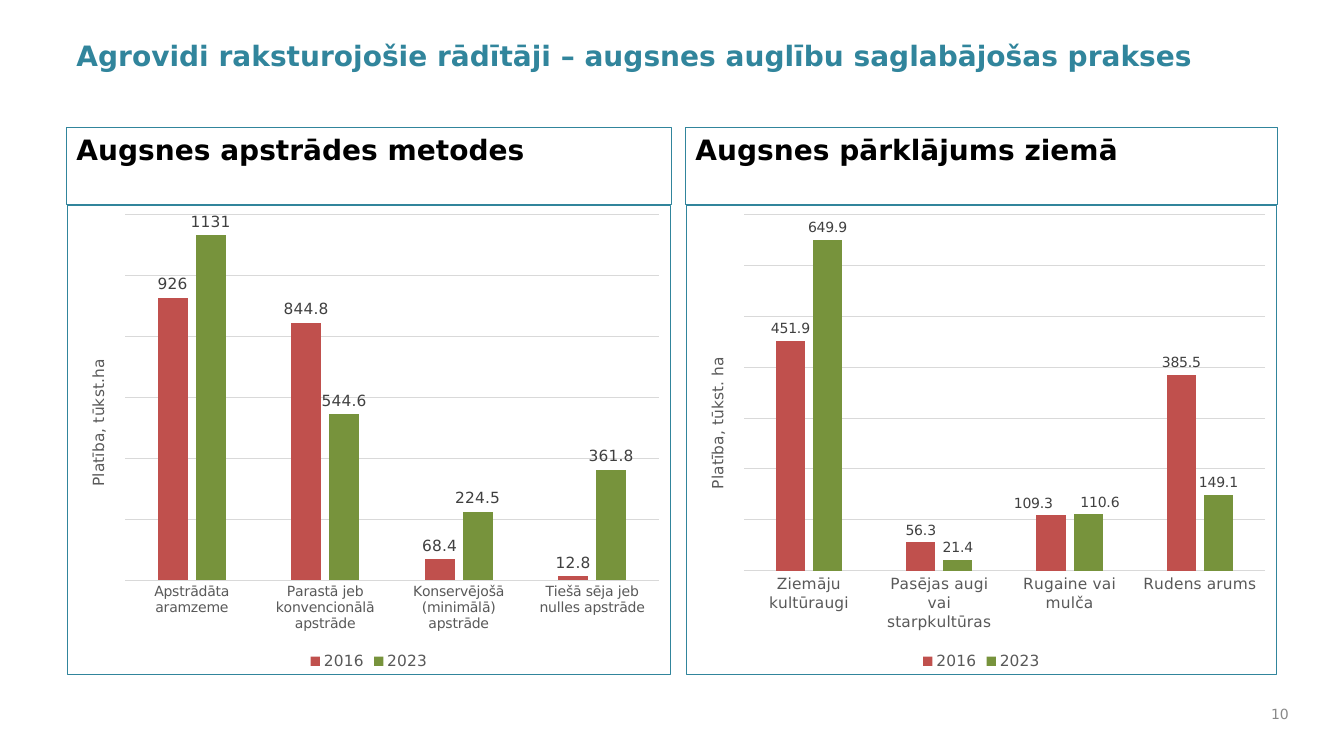
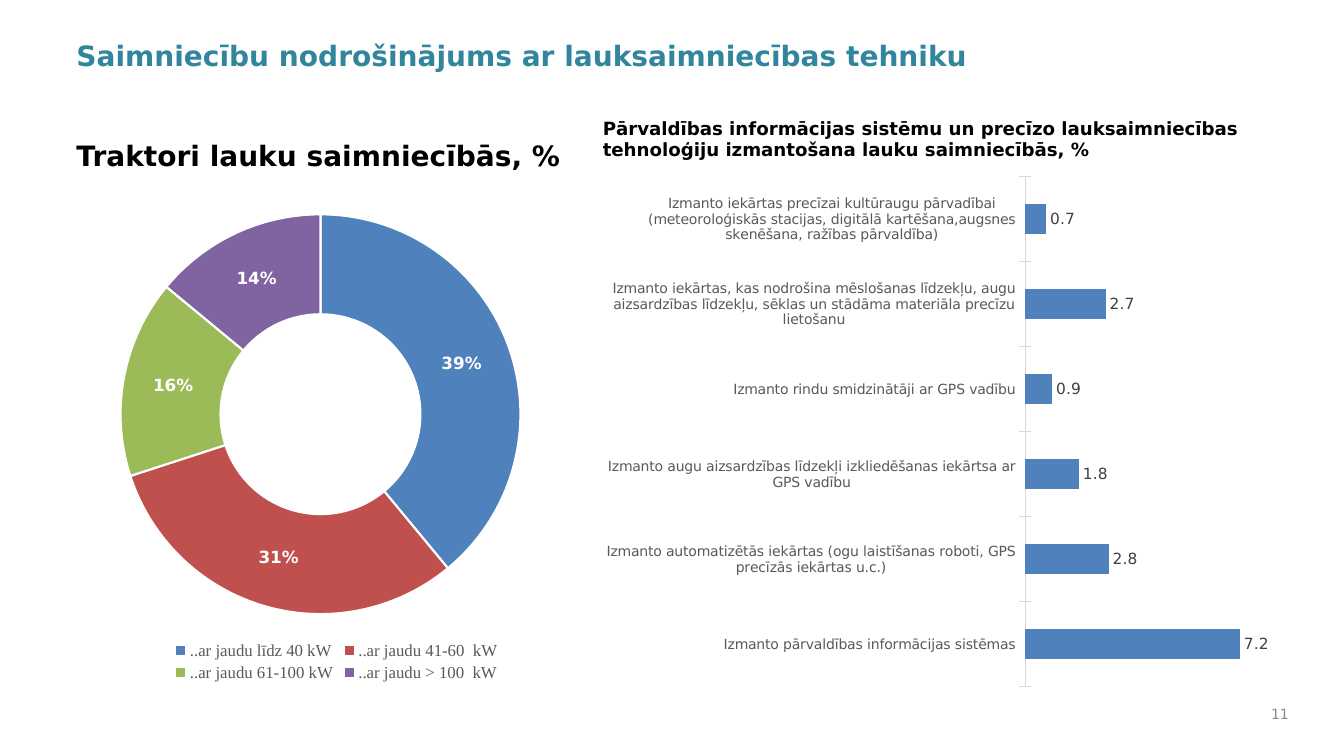
"""Build two slides of farm indicators with native charts."""
from lxml.etree import SubElement
from pptx import Presentation
from pptx.chart.data import CategoryChartData
from pptx.dml.color import RGBColor
from pptx.enum.chart import XL_CHART_TYPE, XL_LABEL_POSITION, XL_LEGEND_POSITION, XL_TICK_MARK
from pptx.enum.text import MSO_ANCHOR, PP_ALIGN
from pptx.oxml import parse_xml
from pptx.oxml.ns import nsdecls, qn
from pptx.util import Inches, Pt

WIDTH, HEIGHT = 13.33, 7.5
MARGIN = 0.66
CONTENT = WIDTH - 2 * MARGIN
SANS, SERIF = "DejaVu Sans", "Times New Roman"
TEAL, BLACK, WHITE = "31859C", "000000", "FFFFFF"
GREY, DARK, PALE, FOOTER = "595959", "404040", "D9D9D9", "898989"
BLUE, RED, LIME, PURPLE, GREEN = "4F81BD", "C0504D", "9BBB59", "8064A2", "77933C"

PANEL_TOP, HEADING_HEIGHT, PANEL_CHART_HEIGHT, PANEL_GAP = 1.27, 0.76, 4.67, 0.14
PRACTICES = {
    "title": "Agrovidi raksturojošie rādītāji – augsnes auglību saglabājošas prakses",
    "number": "10",
    "panels": [
        {
            "heading": "Augsnes apstrādes metodes",
            "width": 6,
            "unit": "Platība, tūkst.ha",
            "categories": ["Apstrādāta aramzeme", "Parastā jeb konvencionālā apstrāde",
                           "Konservējošā (minimālā) apstrāde", "Tiešā sēja jeb nulles apstrāde"],
            "series": [("2016", [926, 844.8, 68.4, 12.8], RED),
                       ("2023", [1131, 544.6, 224.5, 361.8], GREEN)],
            "scale": (1200, 200), "category_size": 10, "label_size": 11, "shifts": [],
        },
        {
            "heading": "Augsnes pārklājums ziemā",
            "width": 5.87,
            "unit": "Platība, tūkst. ha",
            "categories": ["Ziemāju kultūraugi", "Pasējas augi vai starpkultūras",
                           "Rugaine vai mulča", "Rudens arums"],
            "series": [("2016", [451.9, 56.3, 109.3, 385.5], RED),
                       ("2023", [649.9, 21.4, 110.6, 149.1], GREEN)],
            "scale": (700, 100), "category_size": 11, "label_size": 10,
            "shifts": [(0, 2, -0.03), (1, 2, 0.02)],
        },
    ],
}
MACHINERY = {
    "title": "Saimniecību nodrošinājums ar lauksaimniecības tehniku",
    "number": "11",
    "tractor_heading": "Traktori lauku saimniecībās, %",
    "tractors": [("..ar jaudu līdz 40 kW", 39, BLUE), ("..ar jaudu 41-60  kW", 31, RED),
                 ("..ar jaudu 61-100 kW", 16, LIME), ("..ar jaudu > 100  kW", 14, PURPLE)],
    "technology_heading": "Pārvaldības informācijas sistēmu un precīzo lauksaimniecības "
                          "tehnoloģiju izmantošana lauku saimniecībās, %",
    "technologies": [
        ("Izmanto pārvaldības informācijas sistēmas", 7.2),
        ("Izmanto automatizētās iekārtas (ogu laistīšanas roboti, GPS precīzās iekārtas u.c.)", 2.8),
        ("Izmanto augu aizsardzības līdzekļi izkliedēšanas iekārtsa ar GPS vadību", 1.8),
        ("Izmanto rindu smidzinātāji ar GPS vadību", 0.9),
        ("Izmanto iekārtas, kas nodrošina mēslošanas līdzekļu, augu aizsardzības līdzekļu, "
         "sēklas un stādāma materiāla precīzu lietošanu", 2.7),
        ("Izmanto iekārtas precīzai kultūraugu pārvadībai (meteoroloģiskās stacijas, "
         "digitālā kartēšana,augsnes skenēšana, ražības pārvaldība)", 0.7),
    ],
}


def color(value):
    return RGBColor.from_string(value)


def style_font(font, size, tint, face=SANS, bold=False):
    font.size, font.name, font.bold = Pt(size), face, bold
    font.color.rgb = color(tint)


def style_line(line, tint, width=0.75):
    line.color.rgb = color(tint)
    line.width = Pt(width)


def add_text(page, place, text, size=20, tint=BLACK, bold=True,
             align=PP_ALIGN.LEFT, anchor=MSO_ANCHOR.TOP):
    box = page.shapes.add_textbox(*map(Inches, place))
    frame = box.text_frame
    frame.word_wrap = True
    frame.vertical_anchor = anchor
    para = frame.paragraphs[0]
    para.alignment = align
    span = para.add_run()
    span.text = text
    style_font(span.font, size, tint, bold=bold)
    return box


def add_page(deck, content):
    page = deck.slides.add_slide(deck.slide_layouts[6])
    add_text(page, (MARGIN, 0.33, CONTENT, HEADING_HEIGHT), content["title"], tint=TEAL)
    add_text(page, (12.44, 6.92, 0.44, 0.33), content["number"], 10, FOOTER, False,
             PP_ALIGN.RIGHT, MSO_ANCHOR.MIDDLE)
    return page


def add_chart(page, kind, place, categories, series, face=SANS, border=None):
    data = CategoryChartData()
    data.categories = categories
    for name, values in series:
        data.add_series(name, values)
    chart = page.shapes.add_chart(kind, *map(Inches, place), data).chart
    chart.has_title = False
    chart.has_legend = False
    style_font(chart.font, 11, BLACK, face)
    outline = f'<a:solidFill><a:srgbClr val="{border}"/></a:solidFill>' if border else "<a:noFill/>"
    chart.element.find(qn("c:chart")).addnext(parse_xml(
        f'<c:spPr {nsdecls("c", "a")}><a:noFill/><a:ln w="{Pt(0.75)}">{outline}</a:ln></c:spPr>'))
    return chart


def add_legend(chart, size, face=SANS):
    chart.has_legend = True
    chart.legend.position = XL_LEGEND_POSITION.BOTTOM
    chart.legend.include_in_layout = False
    style_font(chart.legend.font, size, GREY, face)


def style_bars(chart, tints, scale, gap, overlap, category_size, label_size, tick):
    plot = chart.plots[0]
    plot.vary_by_categories = False
    plot.gap_width, plot.overlap = gap, overlap
    for series, tint in zip(plot.series, tints):
        series.format.fill.solid()
        series.format.fill.fore_color.rgb = color(tint)
        labels = series.data_labels
        labels.show_value = True
        labels.position = XL_LABEL_POSITION.OUTSIDE_END
        style_font(labels.font, label_size, DARK)
    axis = chart.category_axis
    axis.major_tick_mark, axis.minor_tick_mark = tick, XL_TICK_MARK.NONE
    style_font(axis.tick_labels.font, category_size, GREY)
    style_line(axis.format.line, PALE)
    values = chart.value_axis
    values.visible = False
    values.has_major_gridlines = False
    values.minimum_scale = 0
    values.maximum_scale, values.major_unit = scale


def add_manual_layout(parent, **settings):
    layout = SubElement(parent, qn("c:layout"))
    manual = SubElement(layout, qn("c:manualLayout"))
    for name, value in settings.items():
        SubElement(manual, qn(f"c:{name}")).set("val", str(value))
    return layout


def shift_label(chart, series_index, point_index, shift, size):
    label = chart.plots[0].series[series_index].points[point_index].data_label
    style_font(label.font, size, DARK)
    label.position = XL_LABEL_POSITION.OUTSIDE_END
    labels = chart.plots[0].series[series_index].data_labels.font and chart.element.findall(
        f".//{qn('c:ser')}")[series_index].find(qn("c:dLbls"))
    element = next(item for item in labels.findall(qn("c:dLbl"))
                   if item.find(qn("c:idx")).get("val") == str(point_index))
    element.find(qn("c:idx")).addnext(add_manual_layout(element, x=shift, y=0))


def add_unit(chart, text):
    axis = chart.value_axis
    axis.has_major_gridlines = True
    style_line(axis.major_gridlines.format.line, PALE)
    title = axis.axis_title
    span = title.text_frame.paragraphs[0].add_run()
    span.text = text
    style_font(span.font, 11, GREY)
    body = title.element.find(f".//{qn('a:bodyPr')}")
    body.set("rot", "-5400000")
    body.set("vert", "horz")


def add_panel(page, left, panel):
    width = panel["width"]
    place = (left, PANEL_TOP + HEADING_HEIGHT, width, PANEL_CHART_HEIGHT)
    chart = add_chart(page, XL_CHART_TYPE.COLUMN_CLUSTERED, place, panel["categories"],
                      [(name, values) for name, values, tint in panel["series"]], border=TEAL)
    style_bars(chart, [tint for name, values, tint in panel["series"]], panel["scale"],
               219, -27, panel["category_size"], panel["label_size"], XL_TICK_MARK.NONE)
    add_legend(chart, 11)
    add_unit(chart, panel["unit"])
    for series_index, point_index, shift in panel["shifts"]:
        shift_label(chart, series_index, point_index, shift, panel["label_size"])
    heading = add_text(page, (left, PANEL_TOP, width, HEADING_HEIGHT), panel["heading"])
    style_line(heading.line, TEAL)


def add_tractors(page, place, tractors):
    names, shares, tints = zip(*tractors)
    chart = add_chart(page, XL_CHART_TYPE.DOUGHNUT, place, names, [("Series 1", shares)], SERIF)
    add_legend(chart, 12, SERIF)
    series = chart.plots[0].series[0]
    for index, tint in enumerate(tints):
        slice_format = series.points[index].format
        slice_format.fill.solid()
        slice_format.fill.fore_color.rgb = color(tint)
        style_line(slice_format.line, WHITE, 1.5)
    labels = series.data_labels
    labels.show_value, labels.show_percentage = False, True
    labels.number_format, labels.number_format_is_linked = "0%", False
    style_font(labels.font, 12, WHITE, bold=True)
    area = chart.element.find(f".//{qn('c:plotArea')}")
    for layout in area.findall(qn("c:layout")):
        area.remove(layout)
    area.insert(0, add_manual_layout(area, layoutTarget="inner", xMode="edge", yMode="edge",
                                     x=0.1, y=0.04, w=0.74, h=0.82))


def add_technologies(page, place, technologies):
    names, shares = zip(*technologies)
    chart = add_chart(page, XL_CHART_TYPE.BAR_CLUSTERED, place, names, [("Series 1", shares)])
    style_bars(chart, [BLUE], (8, 1), 182, 0, 10, 11, XL_TICK_MARK.CROSS)


def main():
    deck = Presentation()
    deck.slide_width, deck.slide_height = Inches(WIDTH), Inches(HEIGHT)
    page = add_page(deck, PRACTICES)
    left = MARGIN
    for panel in PRACTICES["panels"]:
        add_panel(page, left, panel)
        left += panel["width"] + PANEL_GAP
    page = add_page(deck, MACHINERY)
    split = 5.88
    add_tractors(page, (MARGIN, 1.91, 5.36, 4.89), MACHINERY["tractors"])
    add_technologies(page, (split, 1.65, MARGIN + CONTENT - split, 5.27), MACHINERY["technologies"])
    add_text(page, (MARGIN, 1.32, split - MARGIN, 0.59), MACHINERY["tractor_heading"])
    add_text(page, (split, 1.11, 6.72, 0.81), MACHINERY["technology_heading"], 13)
    deck.save("out.pptx")


if __name__ == "__main__":
    main()
